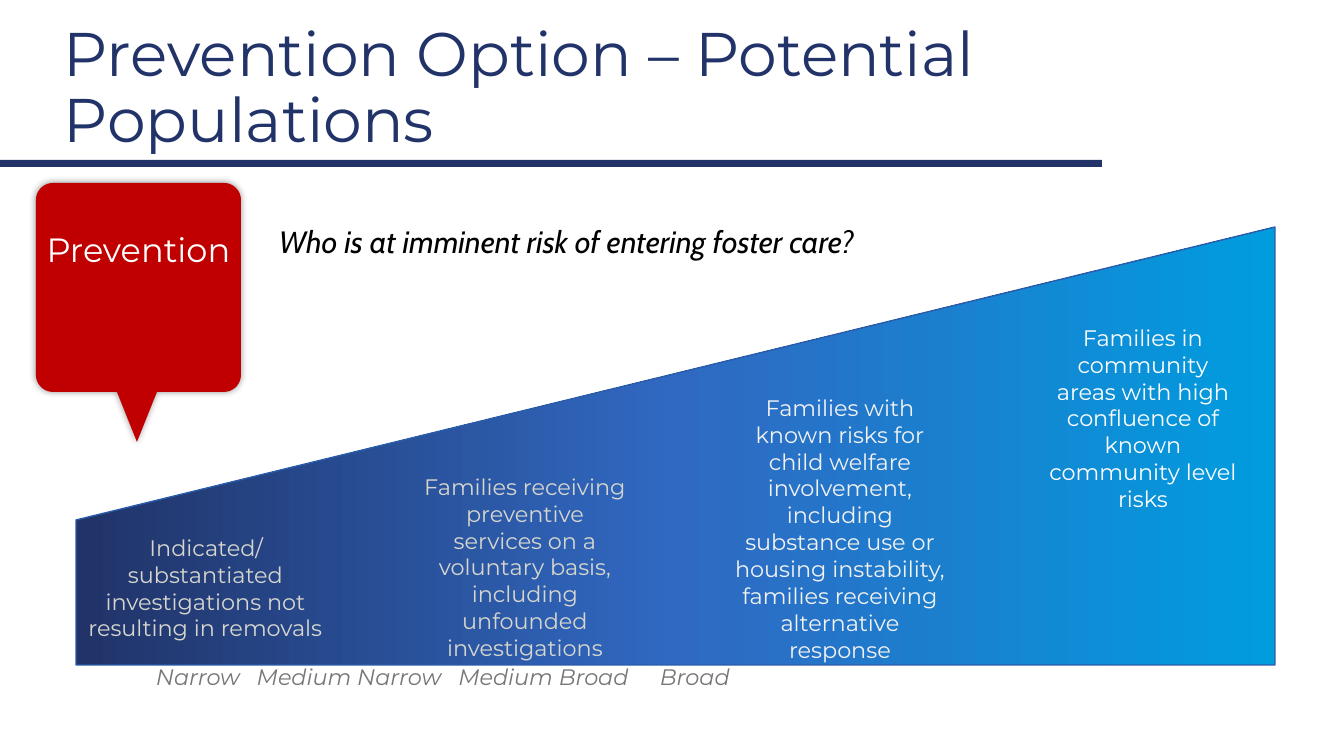
import math

import pptx
import pptx.dml.color
import pptx.enum.shapes
import pptx.enum.text
import pptx.oxml.ns
import pptx.util
from lxml import etree

EMU_PER_PX = 914400 / 100.8

NAVY = pptx.dml.color.RGBColor(0x21, 0x33, 0x68)
MID_BLUE = pptx.dml.color.RGBColor(0x30, 0x69, 0xC2)
SKY = pptx.dml.color.RGBColor(0x00, 0x9C, 0xDE)
OUTLINE = pptx.dml.color.RGBColor(0x2A, 0x5C, 0xAA)
RED = pptx.dml.color.RGBColor(0xC0, 0x00, 0x00)
BLACK = pptx.dml.color.RGBColor(0x00, 0x00, 0x00)
WHITE = pptx.dml.color.RGBColor(0xFF, 0xFF, 0xFF)
PALE = pptx.dml.color.RGBColor(0xD6, 0xD6, 0xCE)
OFF_WHITE = pptx.dml.color.RGBColor(0xF2, 0xF2, 0xF2)
GRAY = pptx.dml.color.RGBColor(0x76, 0x76, 0x76)

LEFT = pptx.enum.text.PP_ALIGN.LEFT
CENTER = pptx.enum.text.PP_ALIGN.CENTER
TOP = pptx.enum.text.MSO_ANCHOR.TOP
BOTTOM = pptx.enum.text.MSO_ANCHOR.BOTTOM

# Left, top, width, height, colour and wording of each population
POPULATIONS = [
    (76, 529, 259, 92, PALE,
     "Indicated/substantiated investigations not resulting in removals"),
    (409, 468, 232, 146, PALE,
     "Families receiving preventive services on a voluntary basis, "
     "including unfounded investigations"),
    (724, 389, 232, 228, OFF_WHITE,
     "Families with known risks for child welfare involvement, including "
     "substance use or housing instability, families receiving alternative response"),
    (1037, 319, 212, 173, WHITE,
     "Families in community areas with high confluence of known "
     "community level risks"),
]
SCOPES = ["Narrow", "Medium Narrow", "Medium Broad", "Broad"]
SCOPE_INDENT = 70
SCOPE_TABS = [353, 681, 1015]


def px(length):
    return pptx.util.Emu(round(length * EMU_PER_PX))


def add_xml(parent, tag, **attributes):
    return etree.SubElement(parent, pptx.oxml.ns.qn(tag), attributes)


def write(paragraph, text, size, color, font="Montserrat", italic=False):
    run = paragraph.add_run()
    run.text = text
    run.font.name = font
    run.font.size = pptx.util.Pt(size)
    run.font.italic = italic
    run.font.color.rgb = color


def add_text(slide, box, text, size, color, align=LEFT, anchor=TOP,
             spacing=1.0, **style):
    frame = slide.shapes.add_textbox(*map(px, box)).text_frame
    frame.word_wrap = True
    frame.vertical_anchor = anchor
    paragraph = frame.paragraphs[0]
    paragraph.alignment = align
    paragraph.line_spacing = spacing
    write(paragraph, text, size, color, **style)
    return paragraph


def add_outline(slide, points):
    start, *rest = [(px(x), px(y)) for x, y in points]
    builder = slide.shapes.build_freeform(*start)
    builder.add_line_segments(rest, close=True)
    shape = builder.convert_to_shape()
    shape.shadow.inherit = False
    return shape


def add_header_rule(slide):
    rule = slide.shapes.add_shape(
        pptx.enum.shapes.MSO_SHAPE.RECTANGLE, *map(px, (0, 160, 1102, 7)))
    rule.shadow.inherit = False
    rule.fill.solid()
    rule.fill.fore_color.rgb = NAVY
    rule.line.fill.background()


def corner(center_x, center_y, radius, start_degrees):
    """Points of a quarter circle, clockwise from the start angle."""
    angles = [math.radians(start_degrees + step) for step in range(0, 91, 10)]
    return [(center_x + radius * math.cos(a), center_y + radius * math.sin(a))
            for a in angles]


def add_callout(slide, text):
    left, top, right, bottom, radius = 36, 183, 241, 392, 17
    tail = [(157, bottom), (137, 442), (117, bottom)]
    callout = add_outline(slide, [
        *corner(left + radius, top + radius, radius, 180),
        *corner(right - radius, top + radius, radius, 270),
        *corner(right - radius, bottom - radius, radius, 0),
        *tail,
        *corner(left + radius, bottom - radius, radius, 90),
    ])
    callout.fill.solid()
    callout.fill.fore_color.rgb = RED
    callout.line.fill.background()

    # Soft shadow
    effects = callout._element.spPr.find(pptx.oxml.ns.qn("a:effectLst"))
    shadow = add_xml(effects, "a:outerShdw", blurRad="63500", dist="0",
                     algn="ctr", rotWithShape="0")
    shadow_color = add_xml(shadow, "a:srgbClr", val=str(BLACK))
    add_xml(shadow_color, "a:alpha", val="40000")

    frame = callout.text_frame
    frame.word_wrap = True
    frame.vertical_anchor = TOP
    frame.margin_left = frame.margin_right = 0
    frame.margin_top = px(46)
    paragraph = frame.paragraphs[0]
    paragraph.alignment = CENTER
    write(paragraph, text, 24, WHITE)


def add_wedge(slide):
    wedge = add_outline(slide, [(76, 520), (1275, 227), (1275, 665), (76, 665)])
    wedge.line.color.rgb = OUTLINE
    wedge.line.width = pptx.util.Pt(1)
    wedge.fill.gradient()
    wedge.fill.gradient_angle = 0
    stops = wedge._element.spPr.find(".//" + pptx.oxml.ns.qn("a:gsLst"))
    for stop in list(stops):
        stops.remove(stop)
    for percent, color in ((0, NAVY), (50, MID_BLUE), (100, SKY)):
        stop = add_xml(stops, "a:gs", pos=str(percent * 1000))
        add_xml(stop, "a:srgbClr", val=str(color))


def add_scope_labels(slide):
    labels = add_text(slide, (76, 658, 1199, 37), "\t".join(SCOPES), 16, GRAY,
                      italic=True)
    properties = labels._p.get_or_add_pPr()
    properties.set("marL", str(px(SCOPE_INDENT)))
    properties.set("indent", "0")
    tabs = add_xml(properties, "a:tabLst")
    for position in SCOPE_TABS:
        add_xml(tabs, "a:tab", pos=str(px(position)), algn="l")


def main():
    deck = pptx.Presentation()
    deck.slide_width, deck.slide_height = px(1344), px(756)
    slide = deck.slides.add_slide(deck.slide_layouts[6])

    # Heading and question
    add_header_rule(slide)
    add_text(slide, (54, 15, 1134, 146), "Prevention Option – Potential Populations",
             44, NAVY, anchor=BOTTOM, spacing=0.9)
    add_text(slide, (269, 222, 1075, 478),
             "Who is at imminent risk of entering foster care?",
             22, BLACK, spacing=0.9, font="Cabin", italic=True)
    add_callout(slide, "Prevention")

    # Widening range of populations
    add_wedge(slide)
    for *box, color, text in POPULATIONS:
        add_text(slide, box, text, 16, color, align=CENTER)
    add_scope_labels(slide)

    deck.save("out.pptx")


if __name__ == "__main__":
    main()
